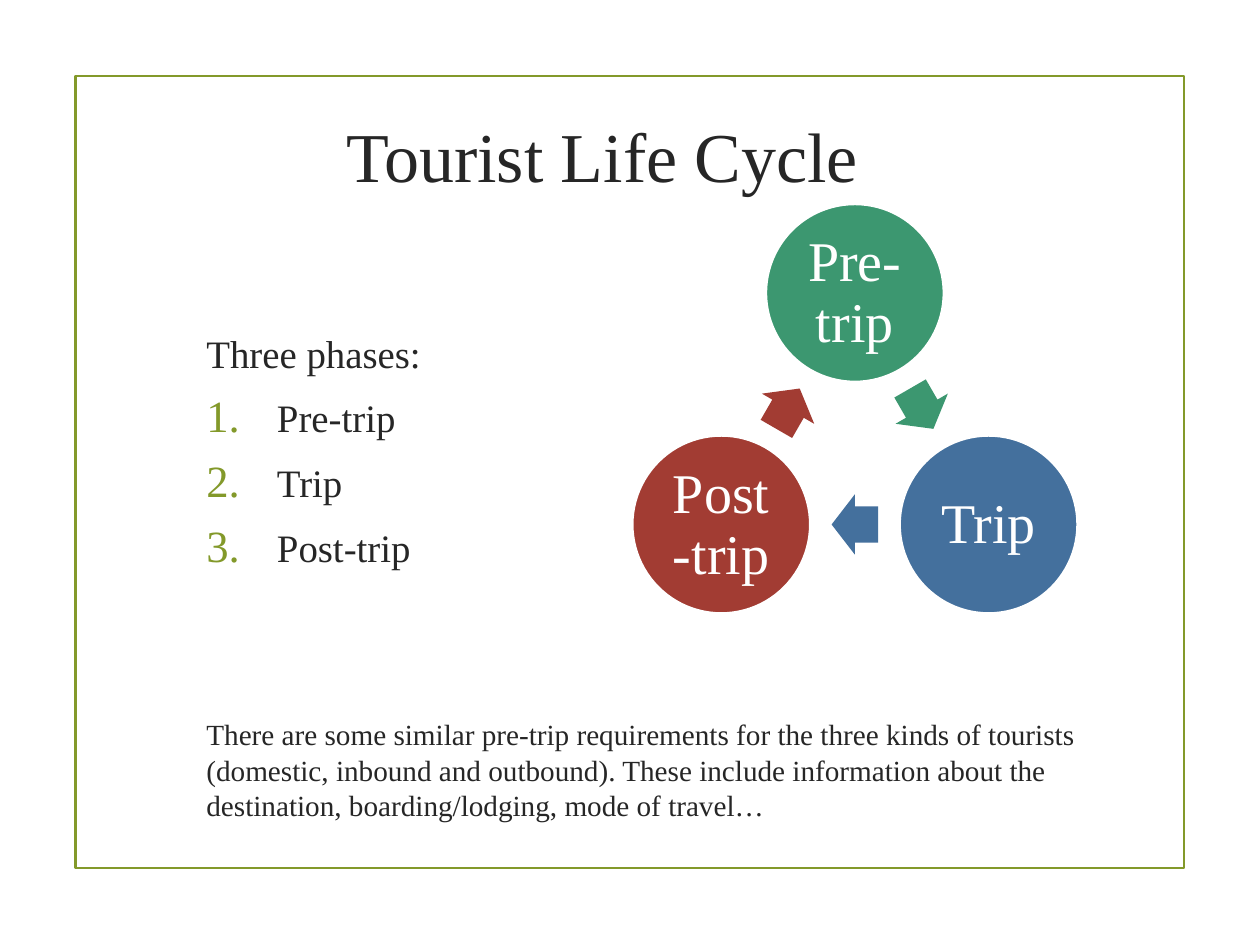
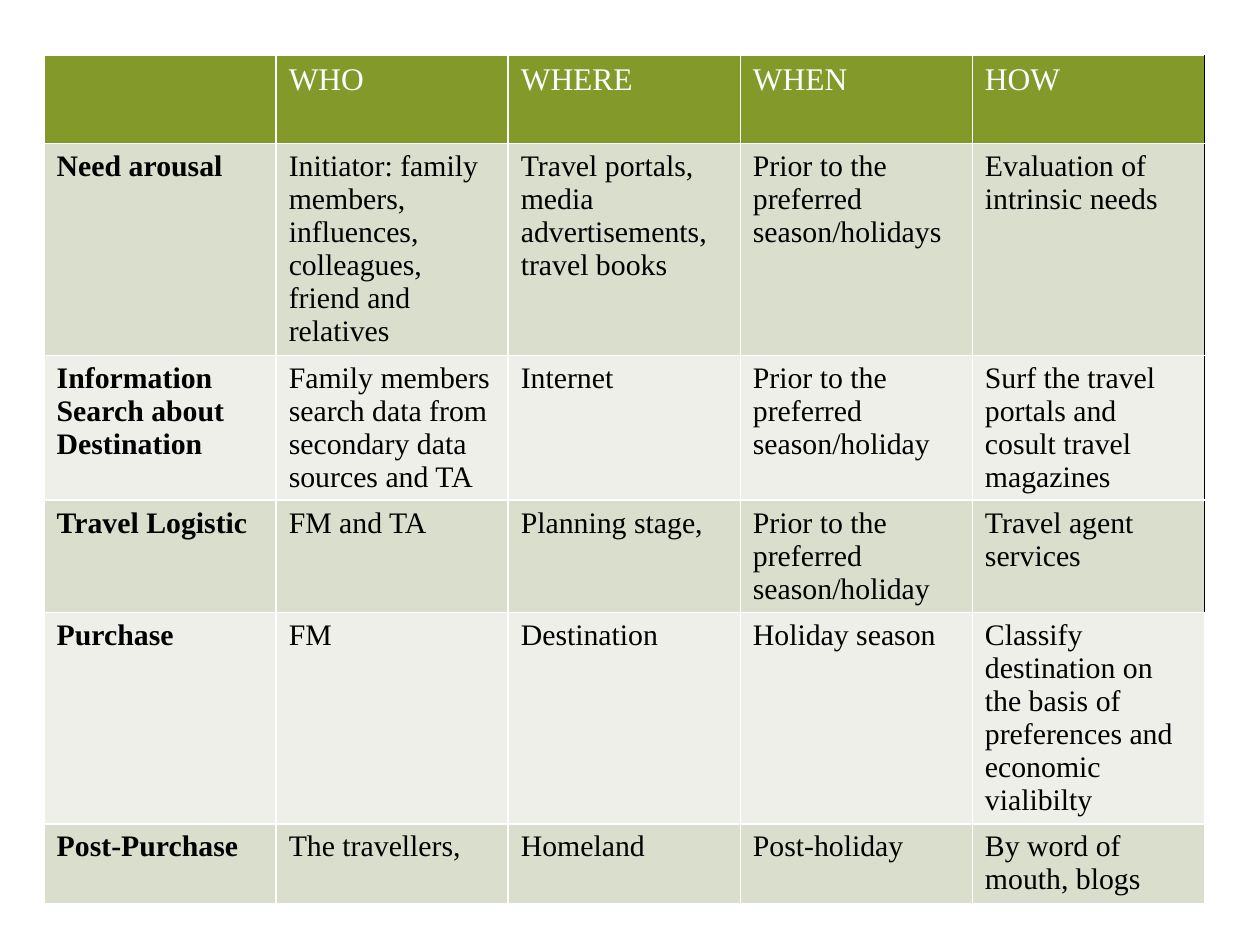
from math import cos, radians, sin

from lxml.etree import SubElement
from pptx import Presentation
from pptx.dml.color import RGBColor
from pptx.enum.shapes import MSO_SHAPE
from pptx.enum.text import MSO_ANCHOR, PP_ALIGN
from pptx.oxml.ns import qn
from pptx.util import Inches, Pt

FONT = "Times New Roman"
HUES = {
    "olive": "83992A", "ink": "262626", "black": "000000", "white": "FFFFFF",
    "green": "3C9770", "blue": "44709D", "red": "A23C33",
    "sage": "D9DECD", "pale": "EDEFE8",
}
PHASES = [("Pre-trip", "green"), ("Trip", "blue"), ("Post-trip", "red")]
NOTE = ("There are some similar pre-trip requirements for the three kinds of tourists "
        "(domestic, inbound and outbound). These include information about the "
        "destination, boarding/lodging, mode of travel…")
HEIGHTS = [0.7, 1.68, 1.15, 0.89, 1.68, 0.63]
ROWS = [
    ["", "WHO", "WHERE", "WHEN", "HOW"],
    ["Need arousal",
     "Initiator: family members, influences, colleagues, friend and relatives",
     "Travel portals, media advertisements, travel books",
     "Prior to the preferred season/holidays", "Evaluation of intrinsic needs"],
    ["Information Search about Destination",
     "Family members search data from secondary data sources and TA", "Internet",
     "Prior to the preferred season/holiday",
     "Surf the travel portals and cosult travel magazines"],
    ["Travel Logistic", "FM and TA", "Planning stage,",
     "Prior to the preferred season/holiday", "Travel agent services"],
    ["Purchase", "FM", "Destination", "Holiday season",
     "Classify destination on the basis of preferences and economic vialibilty"],
    ["Post-Purchase", "The travellers,", "Homeland", "Post-holiday",
     "By word of mouth, blogs"],
]


def color(name):
    return RGBColor.from_string(HUES[name])


def number(para):
    props = para._p.get_or_add_pPr()
    props.set("marL", str(Inches(0.56)))
    props.set("indent", str(-Inches(0.56)))
    tint = SubElement(props, qn("a:buClr"))
    SubElement(tint, qn("a:srgbClr"), val=HUES["olive"])
    SubElement(props, qn("a:buSzPct"), val="115000")
    SubElement(props, qn("a:buFont"), typeface=FONT)
    SubElement(props, qn("a:buAutoNum"), type="arabicPeriod")


def write(para, text, size, hue="ink", bold=False, align=None, pitch=None,
          before=0, after=0, listed=False):
    para.alignment = align
    para.space_before, para.space_after = Pt(before), Pt(after)
    if pitch:
        para.line_spacing = Pt(pitch)
    if listed:
        number(para)
    if not text:
        return
    run = para.add_run()
    run.text = text
    font = run.font
    font.name, font.size, font.bold = FONT, Pt(size), bold
    font.color.rgb = color(hue)


def shape(slide, kind, left, top, width, height, fill=None, line=None):
    item = slide.shapes.add_shape(
        kind, Inches(left), Inches(top), Inches(width), Inches(height))
    item.shadow.inherit = False
    if fill:
        item.fill.solid()
        item.fill.fore_color.rgb = color(fill)
    else:
        item.fill.background()
    if line:
        item.line.color.rgb = color(line)
        item.line.width = Pt(1.25)
    else:
        item.line.fill.background()
    return item


def page(deck, layout):
    slide = deck.slides.add_slide(deck.slide_layouts[layout])
    shape(slide, MSO_SHAPE.RECTANGLE, 0.6, 0.6, 8.8, 6.29, line="olive")
    return slide


def box(slide, left, top, width, height):
    item = slide.shapes.add_textbox(
        Inches(left), Inches(top), Inches(width), Inches(height))
    item.text_frame.word_wrap = True
    return item.text_frame


def title(slide, text):
    item = slide.shapes.title
    item.left, item.top = Inches(0.28), Inches(0.6)
    item.width, item.height = Inches(9), Inches(1.25)
    item.text_frame.vertical_anchor = MSO_ANCHOR.MIDDLE
    write(item.text_frame.paragraphs[0], text, 40, align=PP_ALIGN.CENTER)


def phases(slide):
    frame = box(slide, 1.54, 2.56, 3.4, 2.2)
    write(frame.paragraphs[0], "Three phases:", 22.2, pitch=27, after=6)
    for name, _ in PHASES:
        write(frame.add_paragraph(), name, 22.2, pitch=27, before=4, after=6, listed=True)


def cycle(slide, mid_x=6.785, mid_y=3.55, radius=1.225, size=1.41):
    def spot(angle, reach, width, height):
        turn = radians(angle)
        return (mid_x + reach * cos(turn) - width / 2,
                mid_y + reach * sin(turn) - height / 2, width, height)

    for step, (name, hue) in enumerate(PHASES):
        angle = 120 * step - 90
        disc = shape(slide, MSO_SHAPE.OVAL, *spot(angle, radius, size, size), hue, "white")
        frame = disc.text_frame
        frame.word_wrap = True
        frame.vertical_anchor = MSO_ANCHOR.MIDDLE
        frame.margin_left = frame.margin_right = Inches(0.06)
        frame.margin_top = frame.margin_bottom = Inches(0.04)
        write(frame.paragraphs[0], name, 32, "white", align=PP_ALIGN.CENTER, pitch=35)
        arrow = shape(slide, MSO_SHAPE.RIGHT_ARROW,
                      *spot(angle + 60, radius / 2, 0.37, 0.48), hue)
        arrow.adjustments[0], arrow.adjustments[1] = 0.6, 0.5
        arrow.rotation = angle + 150


def border(cell, side, hue="white"):
    edge = SubElement(cell._tc.get_or_add_tcPr(), qn(f"a:ln{side}"), w=str(Pt(1)))
    fill = SubElement(edge, qn("a:solidFill"))
    SubElement(fill, qn("a:srgbClr"), val=HUES[hue])


def grid(slide):
    table = slide.shapes.add_table(
        len(ROWS), len(ROWS[0]), Inches(0.35), Inches(0.44),
        Inches(9.21), Inches(sum(HEIGHTS))).table
    for r, row in enumerate(ROWS):
        table.rows[r].height = Inches(HEIGHTS[r])
        head = r == 0
        fill = "olive" if head else ("pale", "sage")[r % 2]
        for c, text in enumerate(row):
            cell = table.cell(r, c)
            last = c == len(row) - 1
            for side in "LRTB":
                dark = side == "R" and last and r < 4
                border(cell, side, "black" if dark else "white")
            cell.fill.solid()
            cell.fill.fore_color.rgb = color(fill)
            write(cell.text_frame.paragraphs[0], text, 18 if head else 17,
                  "white" if head else "black", bold=c == 0 and not head,
                  pitch=20 if head else 18.9)


def main():
    """Build the two slides on the tourist life cycle."""
    deck = Presentation()
    deck.slide_width, deck.slide_height = Inches(10), Inches(7.5)

    slide = page(deck, 5)
    title(slide, "Tourist Life Cycle")
    phases(slide)
    cycle(slide)
    note = box(slide, 1.54, 5.64, 7.44, 1)
    write(note.paragraphs[0], NOTE, 16.7, pitch=20)

    grid(page(deck, 6))
    deck.save("out.pptx")


if __name__ == "__main__":
    main()
